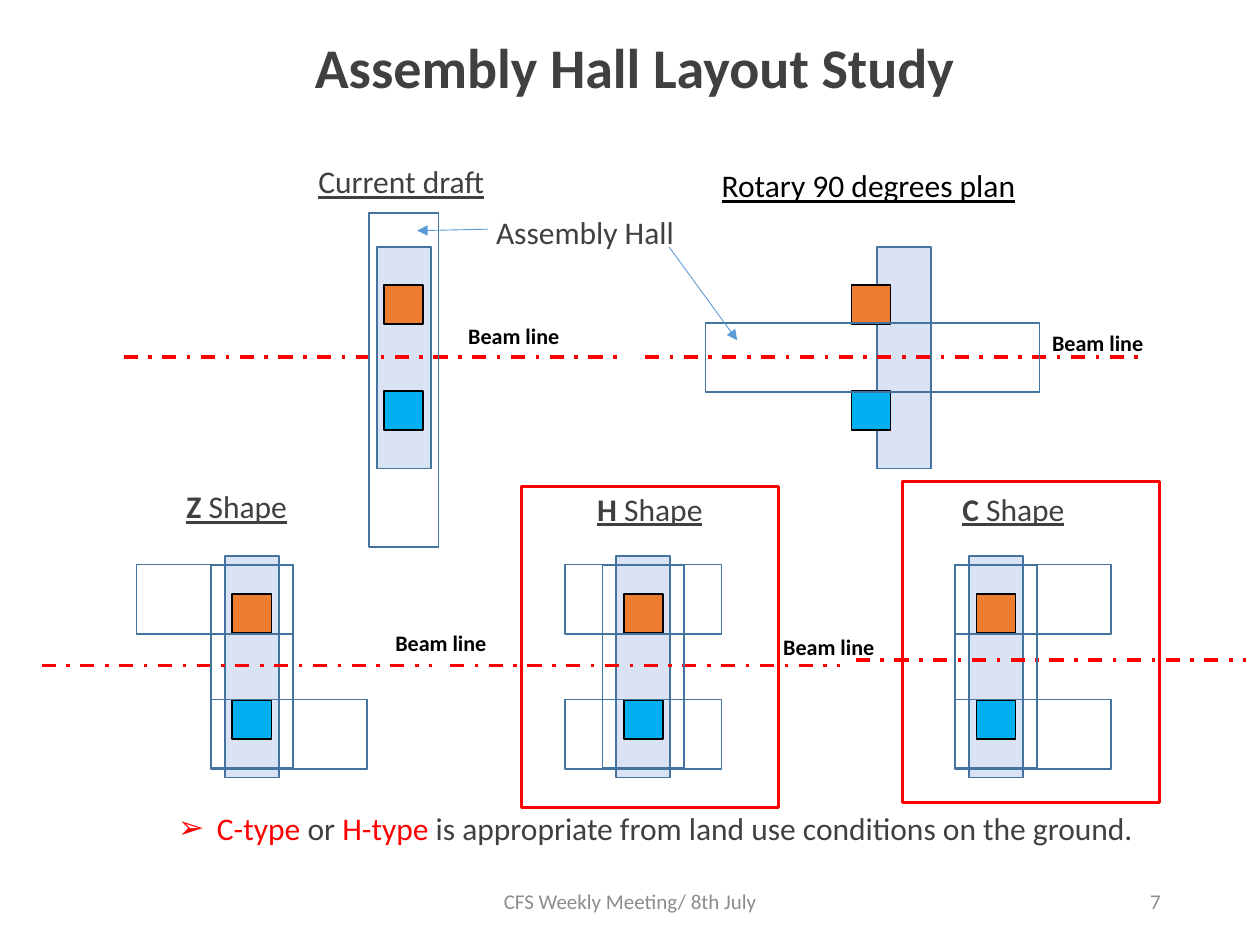
from lxml import etree
from pptx import Presentation
from pptx.dml.color import RGBColor
from pptx.enum.dml import MSO_LINE
from pptx.enum.shapes import MSO_CONNECTOR, MSO_SHAPE
from pptx.enum.text import MSO_ANCHOR, MSO_AUTO_SIZE, PP_ALIGN
from pptx.oxml.ns import qn
from pptx.util import Cm, Pt

RECTANGLE = MSO_SHAPE.RECTANGLE
STRAIGHT = MSO_CONNECTOR.STRAIGHT
DASH_DOT = MSO_LINE.DASH_DOT
MIDDLE = MSO_ANCHOR.MIDDLE
LEFT, CENTER, RIGHT = PP_ALIGN.LEFT, PP_ALIGN.CENTER, PP_ALIGN.RIGHT
FONT = "Calibri"

COLORS = {
    "text": "404040", "black": "000000", "muted": "8C8C8C", "red": "FF0000",
    "tower": "DAE3F3", "outline": "43739E", "orange": "ED7D31",
    "blue": "00B0F0", "arrow": "5B9BD5",
}

# Content; all lengths in cm
TITLE = "Assembly Hall Layout Study"
CONCLUSION = [("C-type", "red"), (" or ", "text"), ("H-type", "red"),
              (" is appropriate from land use conditions on the ground.", "text")]

TOWER = (1.09, 4.47)
DETECTOR = (0.79, 0.79)
DETECTOR_DY = 1.07
FRAME = (1.65, 4.09)
WING = (3.15, 1.4)
WING_DY = 1.36
HIGHLIGHT = (5.18, 6.48)
UPPER_Y, LOWER_Y = 7.21, 13.44

# Tower centre, detector shift, beam line (x from, x to, y), and hall parts
# as (size, x shift, y shift) from the tower centre
PLANS = [
    {"center": (8.14, UPPER_Y), "shift": 0, "beam": (2.49, 12.5, 7.2),
     "hall": [((1.4, 6.73), 0, 0.45)]},
    {"center": (18.22, UPPER_Y), "shift": -0.66, "beam": (13.0, 22.99, 7.2),
     "hall": [((6.73, 1.4), -0.63, 0)]},
    {"center": (5.08, LOWER_Y), "shift": 0, "beam": (0.84, 8.71, 13.42),
     "hall": [(FRAME, 0, 0), (WING, -0.75, -WING_DY), (WING, 0.75, WING_DY)]},
    {"center": (12.97, LOWER_Y), "shift": 0, "beam": (9.07, 16.94, 13.42),
     "hall": [(FRAME, 0, 0), (WING, 0, -WING_DY), (WING, 0, WING_DY)]},
    {"center": (20.08, LOWER_Y), "shift": 0, "beam": (17.25, 25.12, 13.31),
     "hall": [(FRAME, 0, 0), (WING, 0.75, -WING_DY), (WING, 0.75, WING_DY)]},
]
HIGHLIGHT_CENTERS = [(13.11, 13.04), (20.78, 12.94)]

SHAPE_LABELS = [("Z ", (3.51, 9.7, 2.59, 1.02)),
                ("H ", (11.79, 9.75, 2.69, 1.02)),
                ("C ", (19.15, 9.75, 2.62, 1.02))]
HEADINGS = [("Current draft", "text", True, (6.17, 3.15, 3.96, 1.02)),
            ("Rotary 90 degrees plan", "black", True, (14.3, 3.23, 6.5, 1.02)),
            ("Assembly Hall", "text", False, (9.75, 4.17, 4.14, 1.02))]
BEAM_LABELS = [(9.19, 6.5), (20.96, 6.65), (7.72, 12.7), (15.54, 12.78)]
FOOTERS = [("CFS Weekly Meeting/ 8th July", CENTER, (8.41, 17.65, 8.59, 1.02)),
           ("7", RIGHT, (17.93, 17.65, 5.72, 1.02))]
ARROWS = [((9.83, 4.62), (8.41, 4.65)), ((13.49, 4.98), (14.86, 6.86))]


def rgb(name):
    return RGBColor.from_string(COLORS[name])


def place(shape, box):
    shape.left, shape.top, shape.width, shape.height = map(Cm, box)


def add_rect(center, size, fill=None, line="outline", weight=1):
    (x, y), (w, h) = center, size
    rect = slide.shapes.add_shape(
        RECTANGLE, Cm(x - w / 2), Cm(y - h / 2), Cm(w), Cm(h))
    rect.shadow.inherit = False
    if fill:
        rect.fill.solid()
        rect.fill.fore_color.rgb = rgb(fill)
    else:
        rect.fill.background()
    rect.line.color.rgb = rgb(line)
    rect.line.width = Pt(weight)


def add_line(start, end, color, weight):
    line = slide.shapes.add_connector(STRAIGHT, *map(Cm, start + end))
    line.line.color.rgb = rgb(color)
    line.line.width = Pt(weight)
    etree.SubElement(line._element.spPr, qn("a:effectLst"))
    return line


def style(run, size, color, bold=False, underline=False):
    font = run.font
    font.name, font.size, font.bold, font.underline = FONT, Pt(size), bold, underline
    font.color.rgb = rgb(color)


def add_label(text, box, size, color, bold=False, underline=False,
              align=LEFT, wrap=False):
    label = slide.shapes.add_textbox(*map(Cm, box))
    frame = label.text_frame
    frame.text = text
    frame.word_wrap = wrap
    paragraph = frame.paragraphs[0]
    paragraph.alignment = align
    style(paragraph.runs[0], size, color, bold, underline)
    return frame


prs = Presentation()
prs.slide_width, prs.slide_height = Cm(25.4), Cm(19.05)
slide = prs.slides.add_slide(prs.slide_layouts[1])

# Title
title = slide.shapes.title
place(title, (6.02, 0.46, 13.56, 1.9))
title.text_frame.text = TITLE
title.text_frame.auto_size = MSO_AUTO_SIZE.NONE
title.text_frame.vertical_anchor = MIDDLE
title_line = title.text_frame.paragraphs[0]
title_line.alignment = CENTER
title_line.line_spacing = 0.9
style(title_line.runs[0], 32, "text", bold=True)

# Conclusion with arrow bullet
conclusion = slide.placeholders[1]
place(conclusion, (3.33, 16.18, 20.02, 1.02))
conclusion.text_frame.auto_size = MSO_AUTO_SIZE.NONE
sentence = conclusion.text_frame.paragraphs[0]
sentence.space_before = Pt(0)
for words, color in CONCLUSION:
    run = sentence.add_run()
    run.text = words
    style(run, 18, color)
properties = sentence._p.get_or_add_pPr()
properties.set("marL", str(Cm(0.79)))
properties.set("indent", str(Cm(-0.79)))
etree.SubElement(properties, qn("a:buChar")).set("char", "➢")

# Hall plans
for plan in PLANS:
    x, y = plan["center"]
    add_rect((x, y), TOWER, "tower")
    for color, dy in (("orange", -DETECTOR_DY), ("blue", DETECTOR_DY)):
        add_rect((x + plan["shift"], y + dy), DETECTOR, color, "black")
    beam_start, beam_end, beam_y = plan["beam"]
    beam = add_line((beam_start, beam_y), (beam_end, beam_y), "red", 2)
    beam.line.dash_style = DASH_DOT
    for size, dx, dy in plan["hall"]:
        add_rect((x + dx, y + dy), size)

# Labels
for letter, box in SHAPE_LABELS:
    frame = add_label(letter, box, 18, "text", bold=True, underline=True)
    word = frame.paragraphs[0].add_run()
    word.text = "Shape"
    style(word, 18, "text", underline=True)
for text, color, underline, box in HEADINGS:
    add_label(text, box, 18, color, underline=underline)
for left, top in BEAM_LABELS:
    frame = add_label("Beam line", (left, top, 3.35, 0.66), 12.6, "black",
                      bold=True, wrap=True)
    frame.vertical_anchor = MIDDLE
    frame.paragraphs[0].line_spacing = 0.7
for text, align, box in FOOTERS:
    frame = add_label(text, box, 12, "muted", align=align, wrap=True)
    frame.vertical_anchor = MIDDLE

# Arrows to the assembly halls
for start, end in ARROWS:
    arrow = add_line(start, end, "arrow", 0.5)
    etree.SubElement(arrow.line._get_or_add_ln(), qn("a:tailEnd")).set("type", "triangle")

# Preferred options
for center in HIGHLIGHT_CENTERS:
    add_rect(center, HIGHLIGHT, line="red", weight=1.75)

prs.save("out.pptx")
